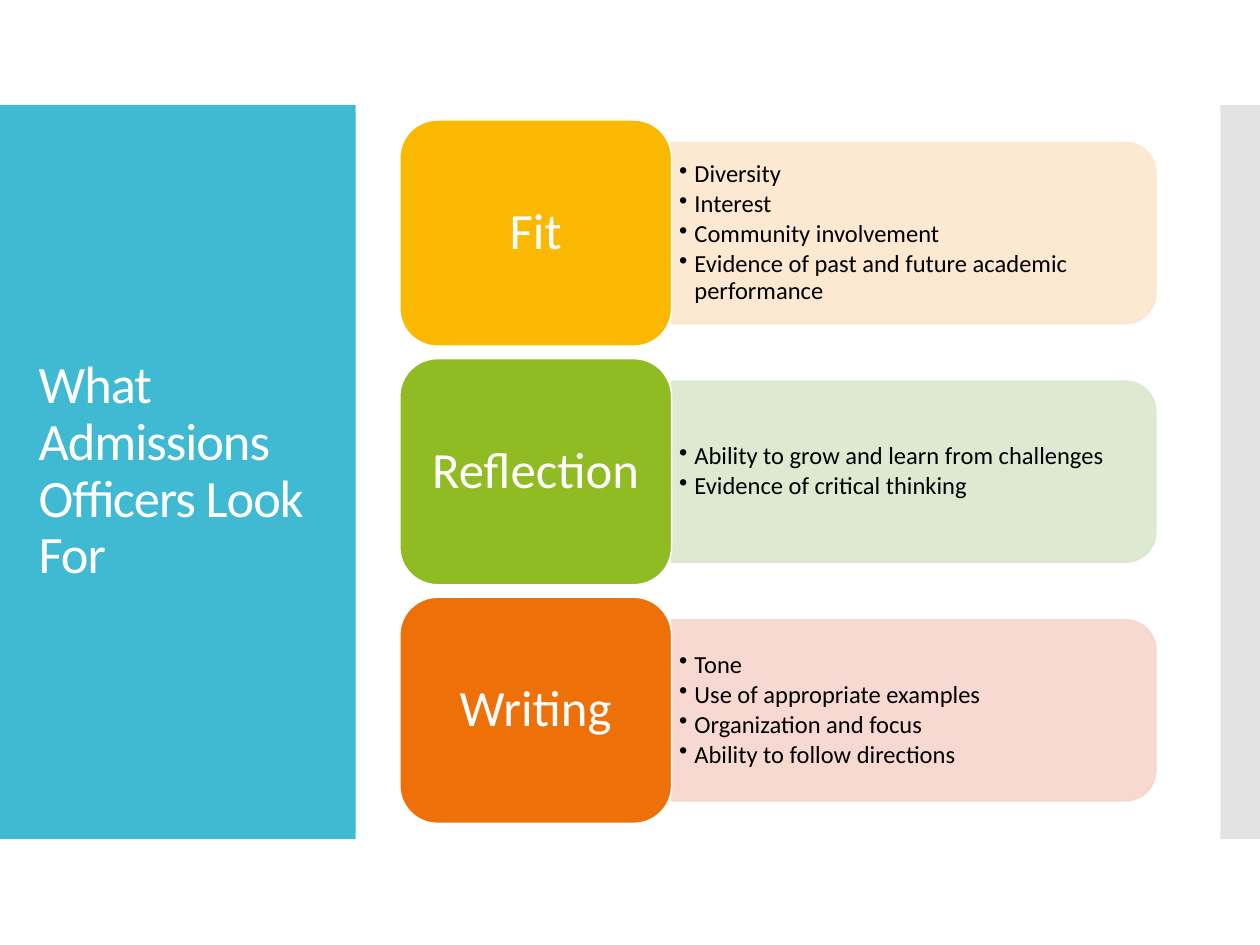
import pptx
import pptx.dml.color
import pptx.enum.shapes
import pptx.enum.text
import pptx.oxml.ns
import pptx.util
from lxml import etree
from pptx.util import Cm

SHAPES = pptx.enum.shapes.MSO_SHAPE
ROWS = [
    ("Fit", "FAB900", "FDE6CC", [
        "Diversity",
        "Interest",
        "Community involvement",
        "Evidence of past and future academic performance",
    ]),
    ("Reflection", "90BB23", "DBE7CD", [
        "Ability to grow and learn from challenges",
        "Evidence of critical thinking",
    ]),
    ("Writing", "EE7008", "F8D5CC", [
        "Tone",
        "Use of appropriate examples",
        "Organization and focus",
        "Ability to follow directions",
    ]),
]
ROW_TOP, ROW_PITCH = 2.42, 4.81
LABEL_LEFT, LABEL_WIDTH, LABEL_HEIGHT = 8.06, 5.48, 4.56
PANEL_WIDTH, PANEL_HEIGHT = 9.76, 3.65
DETAIL_WIDTH, DETAIL_HEIGHT = 9.58, 3.3


def rgb(color):
    """Turn a hex string into a colour."""
    return pptx.dml.color.RGBColor.from_string(color)


def paint(color_format, color, opacity):
    """Set a solid fill's colour and its opacity in percent."""
    color_format.solid()
    color_format.fore_color.rgb = rgb(color)
    if opacity < 100:
        element = color_format._xPr.find(".//" + pptx.oxml.ns.qn("a:srgbClr"))
        alpha = etree.SubElement(element, pptx.oxml.ns.qn("a:alpha"))
        alpha.set("val", str(opacity * 1000))


def add_block(slide, kind, left, top, width, height, color, line=None, opacity=100):
    """Add a filled preset shape, outlined when a line colour is given."""
    shape = slide.shapes.add_shape(kind, Cm(left), Cm(top), Cm(width), Cm(height))
    shape.shadow.inherit = False
    paint(shape.fill, color, opacity)
    if line:
        shape.line.width = pptx.util.Pt(0.85)
        paint(shape.line.fill, line, opacity)
    else:
        shape.line.fill.background()
    return shape


def write(shape, lines, size, color, margins, align=pptx.enum.text.PP_ALIGN.LEFT, space_after=0):
    """Fill a shape with vertically centred paragraphs and return them."""
    frame = shape.text_frame
    frame.word_wrap = True
    frame.vertical_anchor = pptx.enum.text.MSO_ANCHOR.MIDDLE
    frame.margin_left = frame.margin_right = Cm(margins[0])
    frame.margin_top = frame.margin_bottom = Cm(margins[1])
    frame.text = "\n".join(lines)
    for paragraph in frame.paragraphs:
        paragraph.alignment = align
        paragraph.line_spacing = 0.9
        paragraph.space_after = pptx.util.Pt(space_after)
        paragraph.font.name = "Calibri"
        paragraph.font.size = pptx.util.Pt(size)
        paragraph.font.color.rgb = rgb(color)
    return frame.paragraphs


def add_bullet(paragraph):
    """Give a paragraph a hanging round bullet."""
    properties = paragraph._p.get_or_add_pPr()
    properties.set("marL", str(Cm(0.31)))
    properties.set("indent", str(-Cm(0.31)))
    bullet = etree.Element(pptx.oxml.ns.qn("a:buChar"), char="•")
    properties.find(pptx.oxml.ns.qn("a:defRPr")).addprevious(bullet)


def add_title(slide, text):
    """Add the slide title with slightly tightened letters."""
    box = slide.shapes.add_textbox(Cm(0.53), Cm(3.12), Cm(6.15), Cm(12.78))
    for paragraph in write(box, [text], 30, "FFFFFF", (0.25, 0.13)):
        for run in paragraph.runs:
            run._r.get_or_add_rPr().set("spc", "-60")


def add_row(slide, top, label, color, tint, details):
    """Add a coloured label with its tinted panel of bulleted details."""
    middle = top + LABEL_HEIGHT / 2
    panel_left = LABEL_LEFT + LABEL_WIDTH
    panel = add_block(
        slide, SHAPES.ROUND_2_SAME_RECTANGLE,
        panel_left + (PANEL_WIDTH - PANEL_HEIGHT) / 2, middle - PANEL_WIDTH / 2,
        PANEL_HEIGHT, PANEL_WIDTH, tint, tint, 90)
    panel.rotation = 90
    box = slide.shapes.add_textbox(
        Cm(panel_left), Cm(middle - DETAIL_HEIGHT / 2), Cm(DETAIL_WIDTH), Cm(DETAIL_HEIGHT))
    for paragraph in write(box, details, 14, "000000", (0.15, 0.08), space_after=2):
        add_bullet(paragraph)
    block = add_block(
        slide, SHAPES.ROUNDED_RECTANGLE, LABEL_LEFT, top, LABEL_WIDTH, LABEL_HEIGHT, color, "FFFFFF")
    write(block, [label], 29, "FFFFFF", (0.3, 0.15), pptx.enum.text.PP_ALIGN.CENTER)


def main():
    """Build and save the slide."""
    presentation = pptx.Presentation()
    presentation.slide_width, presentation.slide_height = Cm(25.4), Cm(19.05)
    slide = presentation.slides.add_slide(presentation.slide_layouts[6])
    add_block(slide, SHAPES.RECTANGLE, 0, 2.12, 7.17, 14.8, "40BAD2")
    add_block(slide, SHAPES.RECTANGLE, 24.6, 2.12, 0.8, 14.8, "C8C8C8", opacity=50)
    add_title(slide, "What Admissions Officers Look For")
    for index, row in enumerate(ROWS):
        add_row(slide, ROW_TOP + index * ROW_PITCH, *row)
    presentation.save("out.pptx")


if __name__ == "__main__":
    main()
